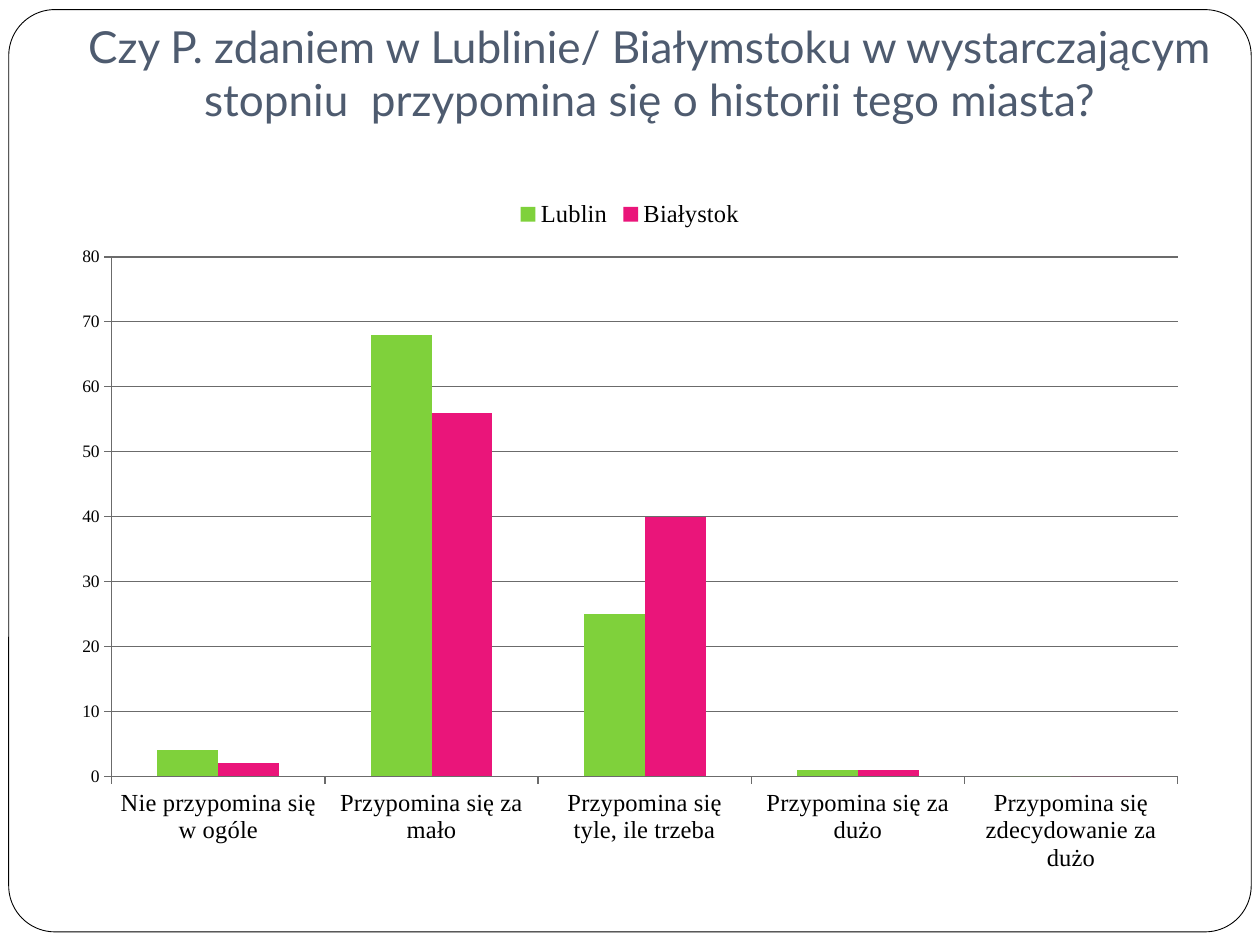
from pptx import Presentation
from pptx.chart.data import CategoryChartData
from pptx.dml.color import RGBColor
from pptx.enum.chart import XL_CHART_TYPE, XL_LEGEND_POSITION, XL_TICK_MARK
from pptx.enum.shapes import MSO_SHAPE
from pptx.enum.text import MSO_ANCHOR, PP_ALIGN
from pptx.util import Pt

COLORS = {
    "white": "FFFFFF",
    "black": "000000",
    "title": "4E5B6F",
    "axis": "6B6B6B",
    "Lublin": "7FD13B",
    "Białystok": "EA157A",
}
TITLE = ("Czy P. zdaniem w Lublinie/ Białymstoku w wystarczającym "
         "stopniu  przypomina się o historii tego miasta?")
ANSWERS = [
    "Nie przypomina się w ogóle",
    "Przypomina się za mało",
    "Przypomina się tyle, ile trzeba",
    "Przypomina się za dużo",
    "Przypomina się zdecydowanie za dużo",
]
RESULTS = {
    "Lublin": [4, 68, 25, 1, 0],
    "Białystok": [2, 56, 40, 1, 0],
}


def rgb(name):
    return RGBColor.from_string(COLORS[name])


def set_font(font, name, size, color):
    font.name = name
    font.size = Pt(size)
    font.color.rgb = rgb(color)


def add_frame(s, x, y, w, h):
    sp = s.shapes.add_shape(MSO_SHAPE.ROUNDED_RECTANGLE, Pt(x), Pt(y), Pt(w), Pt(h))
    sp.adjustments[0] = 0.05
    sp.shadow.inherit = False
    sp.fill.solid()
    sp.fill.fore_color.rgb = rgb("white")
    sp.line.color.rgb = rgb("black")
    sp.line.width = Pt(0.5)


def add_title(s, text, x, y, w, h):
    tf = s.shapes.add_textbox(Pt(x), Pt(y), Pt(w), Pt(h)).text_frame
    tf.word_wrap = True
    tf.vertical_anchor = MSO_ANCHOR.BOTTOM
    tf.margin_bottom = Pt(7.2)
    p = tf.paragraphs[0]
    p.text = text
    p.alignment = PP_ALIGN.CENTER
    set_font(p.font, "Lato", 25.2, "title")


def style_axis(axis, size):
    axis.major_tick_mark = XL_TICK_MARK.OUTSIDE
    axis.format.line.color.rgb = rgb("axis")
    axis.format.line.width = Pt(0.75)
    set_font(axis.tick_labels.font, "Times New Roman", size, "black")


def add_column_chart(s, x, y, w, h):
    data = CategoryChartData()
    data.categories = ANSWERS
    for city, values in RESULTS.items():
        data.add_series(city, values)
    chart = s.shapes.add_chart(XL_CHART_TYPE.COLUMN_CLUSTERED,
                               Pt(x), Pt(y), Pt(w), Pt(h), data).chart
    set_font(chart.font, "Times New Roman", 10, "black")
    chart.has_title = False
    chart.has_legend = True
    chart.legend.position = XL_LEGEND_POSITION.TOP
    chart.legend.include_in_layout = False
    set_font(chart.legend.font, "Times New Roman", 14, "black")

    style_axis(chart.category_axis, 14)
    axis = chart.value_axis
    style_axis(axis, 10)
    axis.minimum_scale, axis.maximum_scale, axis.major_unit = 0, 80, 10
    axis.has_major_gridlines = True
    axis.major_gridlines.format.line.color.rgb = rgb("axis")
    axis.major_gridlines.format.line.width = Pt(0.75)

    plot = chart.plots[0]
    plot.vary_by_categories = False
    plot.gap_width = 150
    plot.overlap = 0
    for series in plot.series:
        series.format.fill.solid()
        series.format.fill.fore_color.rgb = rgb(series.name)


def main():
    prs = Presentation()
    prs.slide_width, prs.slide_height = Pt(720), Pt(540)
    s = prs.slides.add_slide(prs.slide_layouts[6])
    add_frame(s, 5, 5.5, 710, 527)
    add_title(s, TITLE, 22.3, 21.6, 697.7, 57)
    add_column_chart(s, 34, 106.5, 652, 399.5)
    prs.save("out.pptx")


if __name__ == "__main__":
    main()
